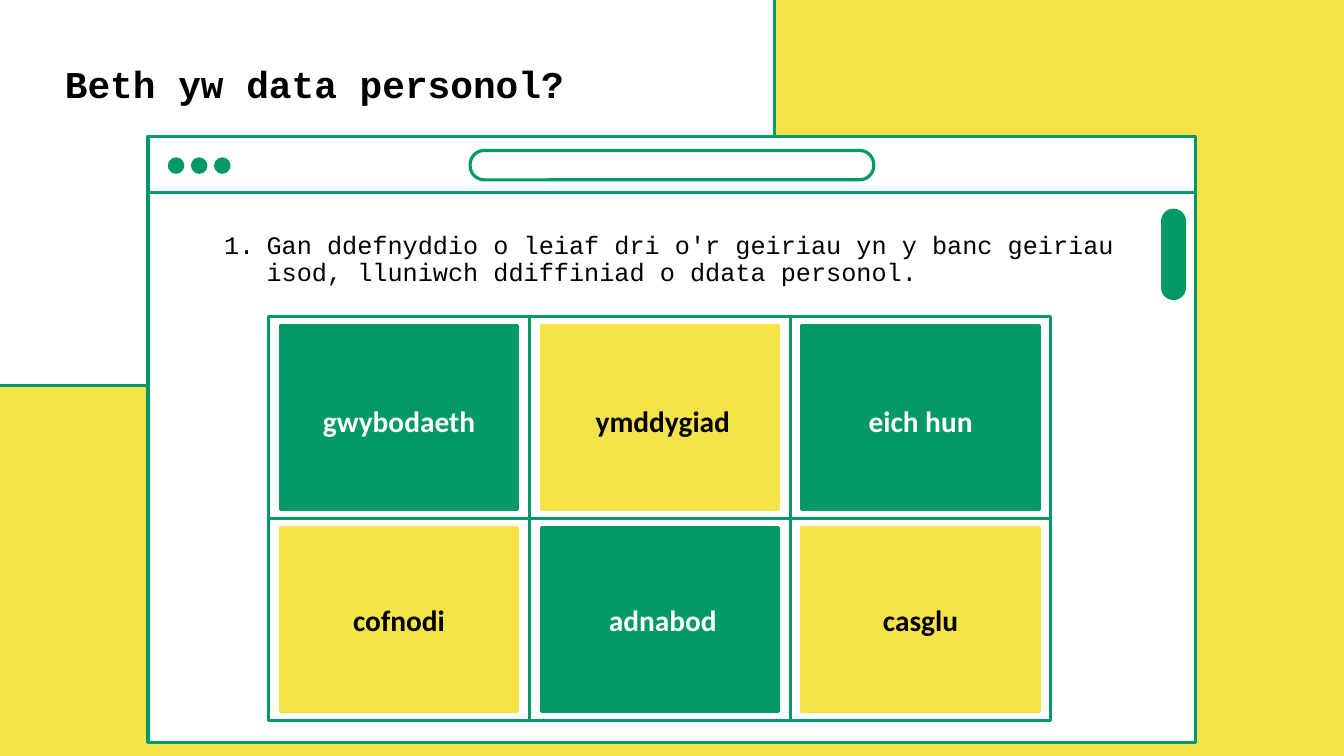
from dataclasses import dataclass

from lxml import etree
from pptx import Presentation
from pptx.dml.color import RGBColor
from pptx.enum.shapes import MSO_SHAPE
from pptx.enum.text import MSO_ANCHOR, PP_ALIGN
from pptx.oxml.ns import qn
from pptx.util import Pt

RECTANGLE = MSO_SHAPE.RECTANGLE
ROUNDED = MSO_SHAPE.ROUNDED_RECTANGLE
OVAL = MSO_SHAPE.OVAL
MIDDLE = MSO_ANCHOR.MIDDLE
LEFT, CENTER = PP_ALIGN.LEFT, PP_ALIGN.CENTER
BLANK_LAYOUT = 6


@dataclass(frozen=True)
class Theme:
    green: str = "019967"
    yellow: str = "F6E249"
    white: str = "FFFFFF"
    black: str = "000000"
    heading_font: str = "Courier New"
    word_font: str = "Calibri"
    title_size: float = 36
    task_size: float = 24
    word_size: float = 28
    line_width: float = 3


class SlideBuilder:
    def __init__(self, slide, theme):
        self.slide = slide
        self.theme = theme

    def background(self, color):
        fill = self.slide.background.fill
        fill.solid()
        fill.fore_color.rgb = RGBColor.from_string(color)

    def shape(self, kind, bounds, fill=None, line=None, width=None, rounding=None):
        shape = self.slide.shapes.add_shape(kind, *map(Pt, bounds))
        shape.shadow.inherit = False
        if fill:
            shape.fill.solid()
            shape.fill.fore_color.rgb = RGBColor.from_string(fill)
        else:
            shape.fill.background()
        if line:
            shape.line.color.rgb = RGBColor.from_string(line)
            shape.line.width = Pt(width or self.theme.line_width)
        else:
            shape.line.fill.background()
        if rounding is not None:
            shape.adjustments[0] = rounding
        return shape

    def text(self, bounds, words, font, margins=(9.6, 4.8), align=LEFT):
        """Add a one-paragraph text box and return the paragraph."""
        frame = self.slide.shapes.add_textbox(*map(Pt, bounds)).text_frame
        side, edge = map(Pt, margins)
        frame_format = {
            "word_wrap": True,
            "vertical_anchor": MIDDLE,
            "margin_left": side,
            "margin_right": side,
            "margin_top": edge,
            "margin_bottom": edge,
        }
        for name, value in frame_format.items():
            setattr(frame, name, value)
        para = frame.paragraphs[0]
        para.alignment = align
        span = para.add_run()
        span.text = words
        span.font.color.rgb = RGBColor.from_string(font["color"])
        for name in ("name", "size", "bold"):
            setattr(span.font, name, font[name])
        return para

    def number(self, para, indent):
        """Number the paragraph automatically, with a hanging indent."""
        properties = para._p.get_or_add_pPr()
        properties.set("marL", str(Pt(indent)))
        properties.set("indent", str(-Pt(indent)))
        bullet_font = etree.SubElement(properties, qn("a:buFont"))
        bullet_font.set("typeface", self.theme.heading_font)
        etree.SubElement(properties, qn("a:buAutoNum")).set("type", "arabicPeriod")


def draw_browser(builder):
    theme = builder.theme
    left, top, width = 141, 130.3, 998
    for height in (576.7, 53.3):
        builder.shape(RECTANGLE, (left, top, width, height), theme.white, theme.green)
    builder.shape(ROUNDED, (1105.9, 198.7, 23.8, 87.1), theme.green, rounding=0.5)
    for index in range(3):
        builder.shape(OVAL, (159.8 + 22 * index, 149.8, 15.8, 15.8), theme.green)
    builder.shape(ROUNDED, (447.8, 143.3, 384.5, 28), line=theme.green, rounding=0.48)


def draw_word_bank(builder, rows):
    theme = builder.theme
    left, top, cell_width, cell_height = 255.8, 301.7, 248.4, 192.2
    inset_x, inset_y = 11.2, 8.6
    card_width, card_height = cell_width - 2 * inset_x, cell_height - 2 * inset_y
    word_top, word_height, word_pitch = 376.6, 48.2, 189.4
    middle_shift = 2.9

    cells = [
        (row, column, left + column * cell_width, top + row * cell_height, word)
        for row, words in enumerate(rows)
        for column, word in enumerate(words)
    ]
    for _, _, x, y, _ in cells:
        builder.shape(RECTANGLE, (x, y, cell_width, cell_height), theme.white, theme.green)
    for row, column, x, y, word in cells:
        is_green = (row + column) % 2 == 0
        fill = theme.green if is_green else theme.yellow
        color = theme.white if is_green else theme.black
        card_left = x + inset_x
        builder.shape(
            RECTANGLE, (card_left, y + inset_y, card_width, card_height), fill, fill
        )
        word_left = card_left + (middle_shift if column == 1 else 0)
        font = {"name": theme.word_font, "size": Pt(theme.word_size),
                "bold": True, "color": color}
        builder.text(
            (word_left, word_top + row * word_pitch, card_width, word_height),
            word, font, align=CENTER,
        )


def main():
    theme = Theme()
    deck = Presentation()
    deck.slide_width, deck.slide_height = Pt(1280.16), Pt(720)
    slide = deck.slides.add_slide(deck.slide_layouts[BLANK_LAYOUT])
    builder = SlideBuilder(slide, theme)

    builder.background(theme.yellow)
    builder.shape(RECTANGLE, (-46, -18, 784, 385), theme.white, theme.green, 2.75)
    draw_browser(builder)
    draw_word_bank(builder, [
        ("gwybodaeth", "ymddygiad", "eich hun"),
        ("cofnodi", "adnabod", "casglu"),
    ])

    task_font = {"name": theme.heading_font, "size": Pt(theme.task_size),
                 "bold": False, "color": theme.black}
    task = builder.text(
        (203.8, 223.2, 871.9, 48.2),
        "Gan ddefnyddio o leiaf dri o'r geiriau yn y banc geiriau isod, "
        "lluniwch ddiffiniad o ddata personol.",
        task_font,
    )
    task.line_spacing = 0.9
    builder.number(task, 40.5)

    title_font = {**task_font, "size": Pt(theme.title_size), "bold": True}
    builder.text((54.7, 48.2, 899.3, 61.9), "Beth yw data personol?",
                 title_font, margins=(7.2, 3.6))

    deck.save("out.pptx")


if __name__ == "__main__":
    main()
